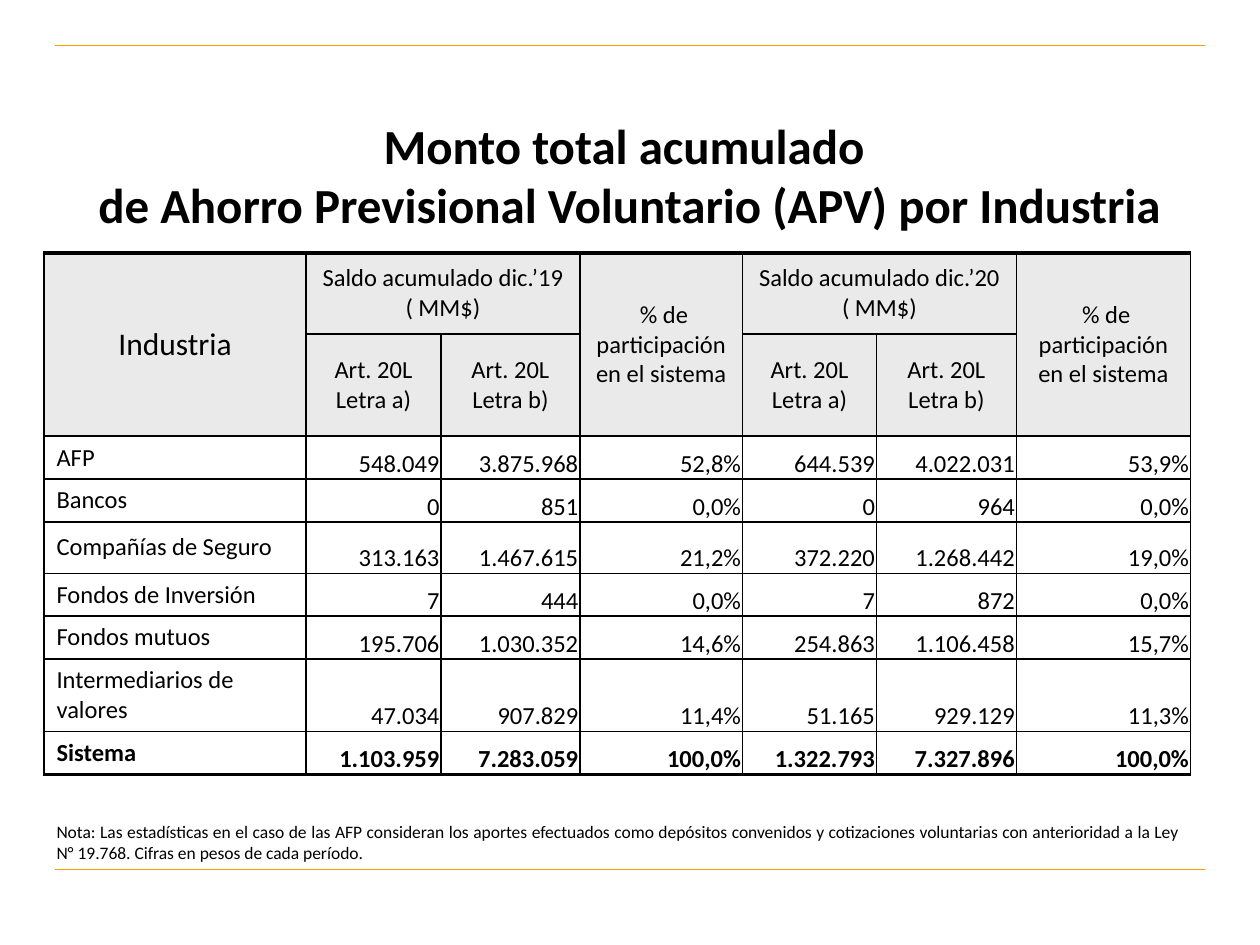
from lxml import etree
from pptx import Presentation
from pptx.dml.color import RGBColor
from pptx.enum.shapes import MSO_CONNECTOR
from pptx.enum.text import MSO_ANCHOR, MSO_AUTO_SIZE, PP_ALIGN
from pptx.oxml.ns import qn
from pptx.util import Cm, Pt

STRAIGHT = MSO_CONNECTOR.STRAIGHT
MIDDLE, BOTTOM = MSO_ANCHOR.MIDDLE, MSO_ANCHOR.BOTTOM
NO_FIT = MSO_AUTO_SIZE.NONE
LEFT, CENTER, RIGHT, JUSTIFY = PP_ALIGN.LEFT, PP_ALIGN.CENTER, PP_ALIGN.RIGHT, PP_ALIGN.JUSTIFY

BLACK = RGBColor(0x00, 0x00, 0x00)
WHITE = RGBColor(0xFF, 0xFF, 0xFF)
HEADER_GRAY = RGBColor(0xEA, 0xEA, 0xEA)
ORANGE = RGBColor(0xFF, 0x99, 0x00)
FONT = "Calibri"

COLUMN_WIDTHS = (5.28, 2.72, 2.8, 3.28, 2.7, 2.82, 3.51)
ROW_HEIGHTS = (1.63, 1.45, 0.86, 0.86, 1.04, 0.86, 0.86, 1.45, 0.86)
PERCENT_COLUMNS = (3, 6)
HEADER_ROWS = 2
LABEL_MARGINS = (0.25, 0.13, 0.25, 0.13)
NUMBER_MARGINS = (0.03, 0.03, 0.03, 0)

MERGES = (
    ((0, 0), (1, 0)),
    ((0, 1), (0, 2)),
    ((0, 3), (1, 3)),
    ((0, 4), (0, 5)),
    ((0, 6), (1, 6)),
)
SHARE = " % de\nparticipación en el sistema"
LETTER_A = "Art. 20L\nLetra a)"
LETTER_B = "Art. 20L\nLetra b)"
ROWS = (
    ("Industria", "Saldo acumulado dic.’19 ( MM$)", None, SHARE,
     "Saldo acumulado dic.’20 ( MM$)", None, SHARE),
    (None, LETTER_A, LETTER_B, None, LETTER_A, LETTER_B, None),
    ("AFP", "548.049", "3.875.968", "52,8%", "644.539", "4.022.031", "53,9%"),
    ("Bancos", "0", "851", "0,0%", "0", "964", "0,0%"),
    ("Compañías de Seguro", "313.163", "1.467.615", "21,2%", "372.220", "1.268.442", "19,0%"),
    ("Fondos de Inversión", "7", "444", "0,0%", "7", "872", "0,0%"),
    ("Fondos mutuos", "195.706", "1.030.352", "14,6%", "254.863", "1.106.458", "15,7%"),
    ("Intermediarios de valores", "47.034", "907.829", "11,4%", "51.165", "929.129", "11,3%"),
    ("Sistema", "1.103.959", "7.283.059", "100,0%", "1.322.793", "7.327.896", "100,0%"),
)
LAST_ROW = len(ROWS) - 1
NOTE = (
    "Nota: Las estadísticas en el caso de las AFP consideran los aportes efectuados "
    "como depósitos convenidos y cotizaciones voluntarias con anterioridad a la Ley "
    "N° 19.768. Cifras en pesos de cada período."
)


def format_text(text_frame, size, alignment, bold=False):
    for paragraph in text_frame.paragraphs:
        paragraph.alignment = alignment
        paragraph.font.name = FONT
        paragraph.font.size = Pt(size)
        paragraph.font.bold = bold
        paragraph.font.color.rgb = BLACK


def add_rule(slide, top):
    rule = slide.shapes.add_connector(STRAIGHT, Cm(1.1), Cm(top), Cm(24.3), Cm(top))
    rule.line.color.rgb = ORANGE
    rule.line.width = Pt(0.75)
    etree.SubElement(rule._element.spPr, qn("a:effectLst"))


def add_title(slide):
    title = slide.shapes.title
    title.left, title.top, title.width, title.height = Cm(0.89), Cm(1.93), Cm(23.6), Cm(3.18)
    text_frame = title.text_frame
    text_frame.text = "Monto total acumulado \vde Ahorro Previsional Voluntario (APV) por Industria"
    text_frame.auto_size = NO_FIT
    text_frame.vertical_anchor = MIDDLE
    format_text(text_frame, 28, CENTER, bold=True)


def set_borders(cell, top, bottom):
    properties = cell._tc.get_or_add_tcPr()
    for side, width in (("L", 1), ("R", 1), ("T", top), ("B", bottom)):
        line = etree.SubElement(properties, qn(f"a:ln{side}"), w=str(Pt(width)))
        fill = etree.SubElement(line, qn("a:solidFill"))
        etree.SubElement(fill, qn("a:srgbClr"), val=str(BLACK))


def fill_cell(cell, row, column, text):
    header = row < HEADER_ROWS
    number = not header and column > 0
    set_borders(cell, 2 if row == 0 else 1, 2 if row == LAST_ROW else 1)
    if number and column in PERCENT_COLUMNS:
        cell.fill.background()
    else:
        cell.fill.solid()
        cell.fill.fore_color.rgb = HEADER_GRAY if header else WHITE
    margins = NUMBER_MARGINS if number else LABEL_MARGINS
    cell.margin_left, cell.margin_top, cell.margin_right, cell.margin_bottom = map(Cm, margins)
    cell.vertical_anchor = BOTTOM if number else MIDDLE
    if text is not None:
        cell.text = text
    alignment = CENTER if header else RIGHT if number else LEFT
    size = 18 if row == column == 0 else 14
    format_text(cell.text_frame, size, alignment, bold=row == LAST_ROW)


def add_savings_table(slide):
    frame = slide.shapes.add_table(
        len(ROWS), len(COLUMN_WIDTHS), Cm(0.89), Cm(5.1),
        Cm(sum(COLUMN_WIDTHS)), Cm(sum(ROW_HEIGHTS)))
    table = frame.table
    table.first_row = False
    table.horz_banding = False
    for column, width in zip(table.columns, COLUMN_WIDTHS):
        column.width = Cm(width)
    for row, height in zip(table.rows, ROW_HEIGHTS):
        row.height = Cm(height)
    for start, end in MERGES:
        table.cell(*start).merge(table.cell(*end))
    for row, texts in enumerate(ROWS):
        for column, text in enumerate(texts):
            fill_cell(table.cell(row, column), row, column, text)


def add_note(slide):
    note = slide.shapes.add_textbox(Cm(0.89), Cm(16.43), Cm(23.11), Cm(1.12))
    note.text_frame.word_wrap = True
    note.text_frame.text = NOTE
    format_text(note.text_frame, 10, JUSTIFY)


def main():
    presentation = Presentation()
    presentation.slide_width = Cm(25.4)
    presentation.slide_height = Cm(19.05)
    slide = presentation.slides.add_slide(presentation.slide_layouts[5])
    for top in (0.92, 17.53):
        add_rule(slide, top)
    add_title(slide)
    add_savings_table(slide)
    add_note(slide)
    presentation.save("out.pptx")


if __name__ == "__main__":
    main()
